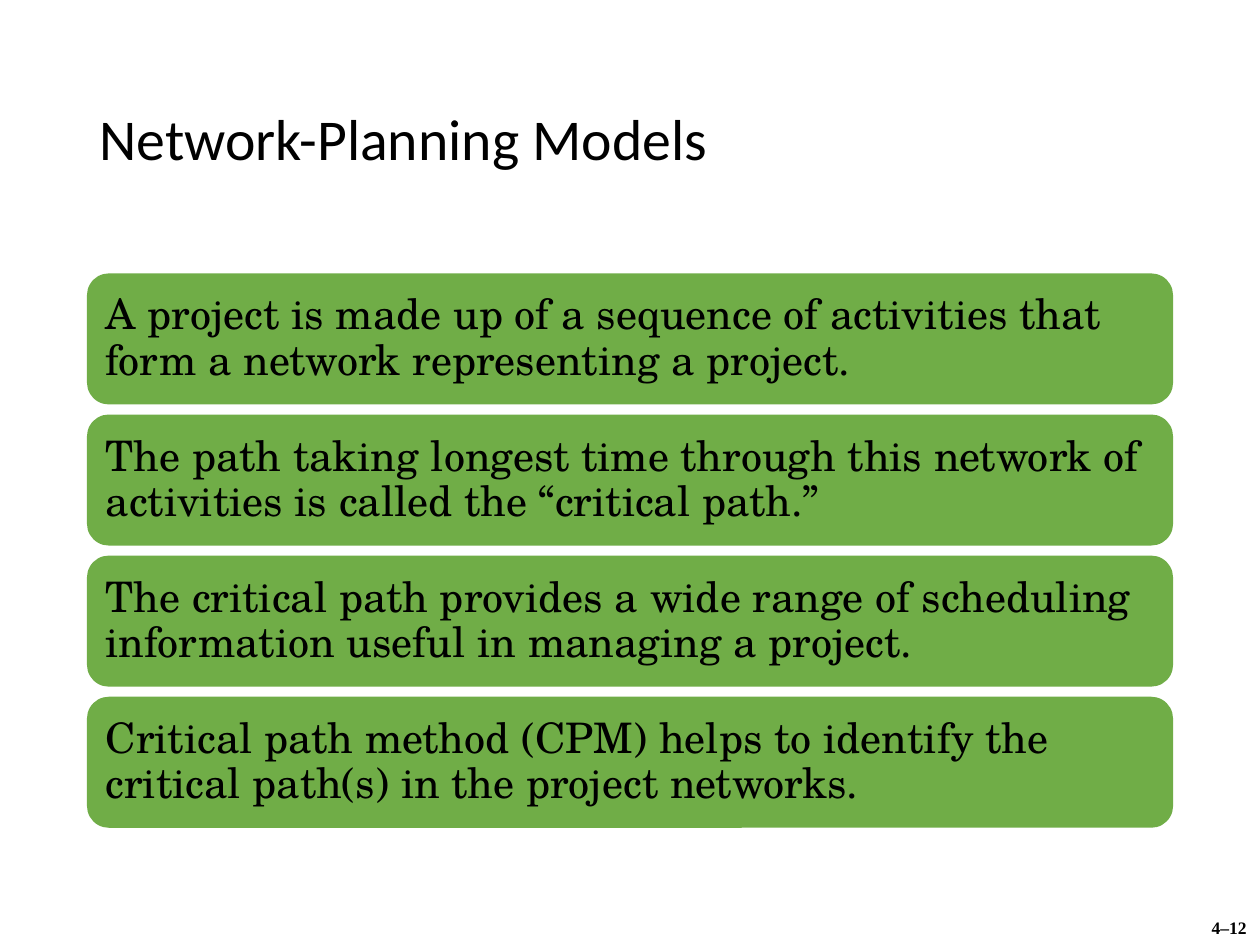
from pptx import Presentation
from pptx.dml.color import RGBColor
from pptx.enum.shapes import MSO_SHAPE
from pptx.enum.text import MSO_ANCHOR, MSO_AUTO_SIZE, PP_ALIGN
from pptx.util import Inches, Pt

ROUNDED = MSO_SHAPE.ROUNDED_RECTANGLE
MIDDLE, TOP = MSO_ANCHOR.MIDDLE, MSO_ANCHOR.TOP
LEFT, CENTER = PP_ALIGN.LEFT, PP_ALIGN.CENTER
GROW, FIXED = MSO_AUTO_SIZE.SHAPE_TO_FIT_TEXT, MSO_AUTO_SIZE.NONE

TITLE = "Network-Planning Models"
PAGE_NUMBER = "4–12"
STATEMENTS = [
    "A project is made up of a sequence of activities that form a network representing a project.",
    "The path taking longest time through this network of activities is called the “critical path.”",
    "The critical path provides a wide range of scheduling information useful in managing a project.",
    "Critical path method (CPM) helps to identify the critical path(s) in the project networks.",
]

THEME = {
    "text": RGBColor.from_string("000000"),
    "card": RGBColor.from_string("70AD47"),
    "title": {"name": "Calibri", "size": Pt(33), "bold": False},
    "statement": {"name": "TeX Gyre Schola", "size": Pt(24), "bold": False},
    "page_number": {"name": "Times New Roman", "size": Pt(10), "bold": True},
}
PARAGRAPHS = {
    "title": {"alignment": LEFT, "line_spacing": 0.9},
    "statement": {"alignment": LEFT, "line_spacing": 0.9},
    "page_number": {"alignment": CENTER},
}
INSET = Inches(0.1)
FRAMES = {
    "title": {"vertical_anchor": MIDDLE, "word_wrap": True, "auto_size": FIXED},
    "statement": {
        "vertical_anchor": MIDDLE, "word_wrap": True, "auto_size": FIXED,
        "margin_left": INSET, "margin_right": INSET,
        "margin_top": INSET, "margin_bottom": INSET,
    },
    "page_number": {"vertical_anchor": TOP, "word_wrap": False, "auto_size": GROW},
}

MARGIN, CONTENT_WIDTH = 0.69, 8.62
CARD_TOP, CARD_HEIGHT, CARD_PITCH = 2.17, 1.04, 1.12


def apply_format(target, values):
    for name, value in values.items():
        setattr(target, name, value)


def write_text(shape, text, role):
    frame = shape.text_frame
    apply_format(frame, FRAMES[role])
    paragraph = frame.paragraphs[0]
    apply_format(paragraph, PARAGRAPHS[role])
    run = paragraph.add_run()
    run.text = text
    apply_format(run.font, THEME[role])
    run.font.color.rgb = THEME["text"]


def add_label(slide, text, role, *box):
    write_text(slide.shapes.add_textbox(*map(Inches, box)), text, role)


def add_card(slide, text, top):
    box = map(Inches, (MARGIN, top, CONTENT_WIDTH, CARD_HEIGHT))
    card = slide.shapes.add_shape(ROUNDED, *box)
    card.shadow.inherit = False
    card.fill.solid()
    card.fill.fore_color.rgb = THEME["card"]
    card.line.fill.background()
    write_text(card, text, "statement")


def main():
    presentation = Presentation()
    presentation.slide_width = Inches(10)
    presentation.slide_height = Inches(7.5)
    slide = presentation.slides.add_slide(presentation.slide_layouts[6])
    add_label(slide, PAGE_NUMBER, "page_number", 9.5, 7.23, 0.51, 0.27)
    add_label(slide, TITLE, "title", MARGIN, 0.4, CONTENT_WIDTH, 1.45)
    for index, statement in enumerate(STATEMENTS):
        add_card(slide, statement, CARD_TOP + index * CARD_PITCH)
    presentation.save("out.pptx")


if __name__ == "__main__":
    main()
